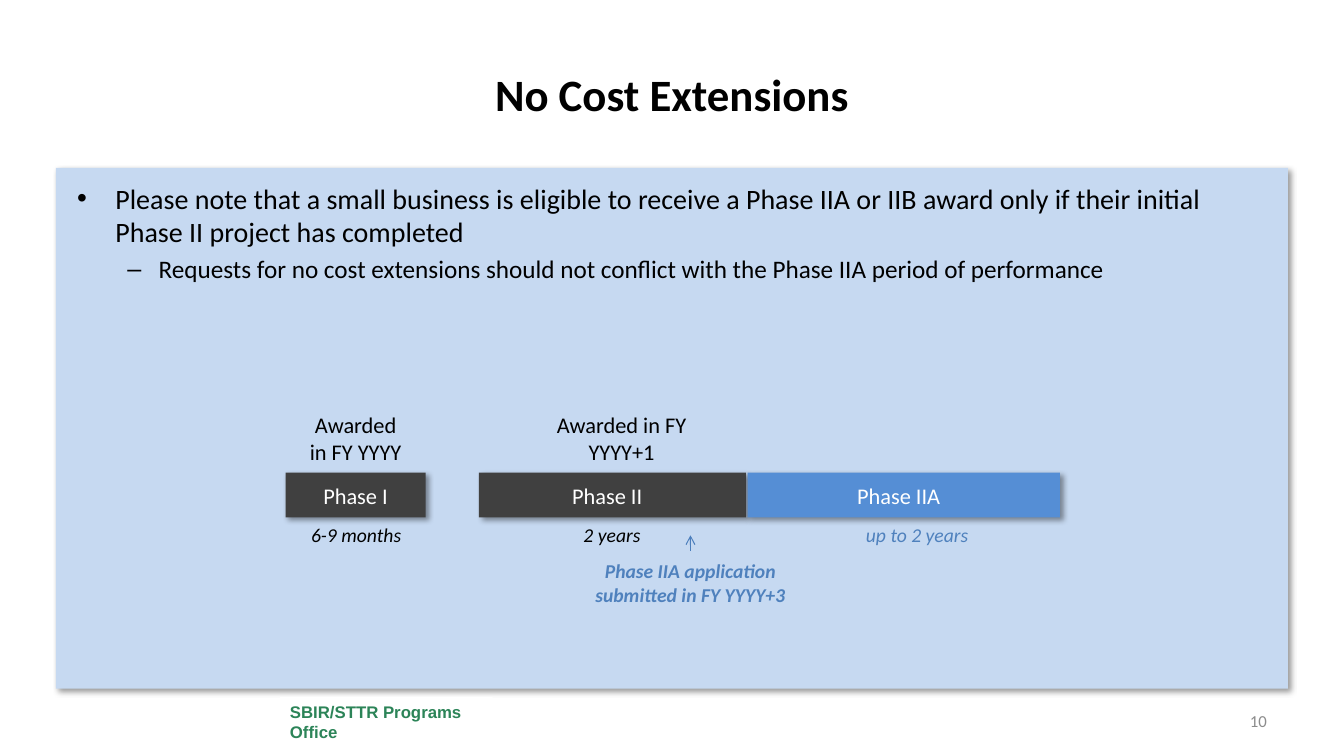
from dataclasses import dataclass

from lxml.etree import SubElement
from pptx import Presentation
from pptx.dml.color import RGBColor
from pptx.enum.shapes import MSO_CONNECTOR, MSO_SHAPE
from pptx.enum.text import MSO_ANCHOR, PP_ALIGN
from pptx.oxml.ns import qn
from pptx.util import Emu, Inches, Pt


@dataclass(frozen=True)
class Theme:
    font: str = "Calibri"
    footer_font: str = "Arial"
    black: str = "000000"
    white: str = "FFFFFF"
    panel: str = "C6D9F1"
    dark: str = "404040"
    blue: str = "558ED5"
    accent: str = "4F81BD"
    arrow: str = "4B7EBC"
    green: str = "2C8458"
    grey: str = "8C8C8C"
    title: int = 32
    body: int = 20
    sub: int = 18
    label: int = 16
    note: int = 14
    small: int = 12


T = Theme()
COLUMNS, ROWS = 240, 135
CELL = Inches(1) // 18
BAR_TOP, BAR_HEIGHT = 84.4, 8
DATE_TOP, DATE_HEIGHT = 72.5, 11.5
LENGTH_TOP, LENGTH_WIDTH, LENGTH_HEIGHT = 92.4, 23.6, 6.2


def grid(*cells):
    return [Emu(round(n * CELL)) for n in cells]


def add_run(p, text, size, color=T.black, font=T.font, bold=False, italic=False):
    r = p.add_run()
    r.text = text
    r.font.name = font
    r.font.size = Pt(size)
    r.font.bold = bold
    r.font.italic = italic
    r.font.color.rgb = RGBColor.from_string(color)


def add_rect(s, box, fill):
    sp = s.shapes.add_shape(MSO_SHAPE.RECTANGLE, *grid(*box))
    sp.fill.solid()
    sp.fill.fore_color.rgb = RGBColor.from_string(fill)
    sp.line.fill.background()
    sp.shadow.inherit = False
    sp.text_frame.word_wrap = True
    sp.text_frame.vertical_anchor = MSO_ANCHOR.MIDDLE
    return sp


def add_shadow(sp):
    effects = sp.element.spPr.find(qn("a:effectLst"))
    shadow = SubElement(effects, qn("a:outerShdw"), blurRad=str(Pt(4)),
                        dist=str(Pt(3)), dir="2700000", algn="tl", rotWithShape="0")
    color = SubElement(shadow, qn("a:srgbClr"), val=T.black)
    SubElement(color, qn("a:alpha"), val="40000")


def add_text(s, box, text, size, align=PP_ALIGN.CENTER, anchor=MSO_ANCHOR.TOP, **style):
    tf = s.shapes.add_textbox(*grid(*box)).text_frame
    tf.word_wrap = True
    tf.vertical_anchor = anchor
    p = tf.paragraphs[0]
    p.alignment = align
    add_run(p, text, size, **style)


def add_bullet(p, char, margin, hanging, level=0):
    p.level = level
    pPr = p._p.get_or_add_pPr()
    pPr.set("marL", str(Inches(margin)))
    pPr.set("indent", str(-Inches(hanging)))
    SubElement(pPr, qn("a:buFont"), typeface=T.footer_font)
    SubElement(pPr, qn("a:buChar"), char=char)


def add_body(s, box):
    tf = s.shapes.add_textbox(*grid(*box)).text_frame
    tf.word_wrap = True
    p = tf.paragraphs[0]
    add_bullet(p, "•", 0.38, 0.38)
    add_run(p, "Please note that a small business is eligible to receive a Phase IIA "
               "or IIB award only if their initial Phase II project has completed", T.body)
    p = tf.add_paragraph()
    p.space_before = Pt(0.2 * T.sub)
    add_bullet(p, "–", 0.81, 0.31, level=1)
    add_run(p, "Requests for no cost extensions should not conflict with "
               "the Phase IIA period of performance", T.sub)


def add_phase(s, left, width, name, fill, right_inset=0.1):
    sp = add_rect(s, (left, BAR_TOP, width, BAR_HEIGHT), fill)
    add_shadow(sp)
    tf = sp.text_frame
    tf.margin_right = Inches(right_inset)
    p = tf.paragraphs[0]
    p.alignment = PP_ALIGN.CENTER
    add_run(p, name, T.label, T.white)


def add_length(s, left, text, color=T.black):
    box = (left, LENGTH_TOP, LENGTH_WIDTH, LENGTH_HEIGHT)
    add_text(s, box, text, T.note, color=color, italic=True)


def add_date(s, left, width, text):
    add_text(s, (left, DATE_TOP, width, DATE_HEIGHT), text, T.label)


def add_arrow(s, x, start, end):
    cx = s.shapes.add_connector(MSO_CONNECTOR.STRAIGHT, *grid(x, start, x, end))
    cx.line.color.rgb = RGBColor.from_string(T.arrow)
    cx.line.width = Pt(0.75)
    SubElement(cx.line._get_or_add_ln(), qn("a:tailEnd"), type="arrow")
    SubElement(cx.element.spPr, qn("a:effectLst"))


def add_footer(s):
    sp = add_rect(s, (50, 124.5, 38, 8.7), T.white)
    p = sp.text_frame.paragraphs[0]
    p.alignment = PP_ALIGN.LEFT
    add_run(p, "SBIR/STTR Programs Office", T.small, T.green, T.footer_font, bold=True)
    add_text(s, (190, 125.1, 38, 7.2), "10", T.small, PP_ALIGN.RIGHT,
             MSO_ANCHOR.MIDDLE, color=T.grey)


def add_timeline(s):
    add_phase(s, 51, 25, "Phase I", T.dark)
    add_phase(s, 85.5, 47.7, "Phase II", T.dark, 0.2)
    add_phase(s, 133.5, 55.8, "Phase IIA", T.blue, 0.2)
    add_date(s, 53, 21, "Awarded in FY YYYY")
    add_date(s, 96, 30, "Awarded in FY YYYY+1")
    add_length(s, 51.8, "6-9 months")
    add_length(s, 97.5, "2 years")
    add_length(s, 152, "up to 2 years", T.accent)
    add_arrow(s, 123.3, 98.4, 95.6)
    add_text(s, (103.3, 99, 40, 10.3), "Phase IIA application submitted in FY YYYY+3",
             T.note, color=T.accent, bold=True, italic=True)


def main():
    prs = Presentation()
    prs.slide_width, prs.slide_height = grid(COLUMNS, ROWS)
    s = prs.slides.add_slide(prs.slide_layouts[6])
    add_shadow(add_rect(s, (10, 30, 220, 93), T.panel))
    add_footer(s)
    add_text(s, (12, 5.4, 216, 22.5), "No Cost Extensions", T.title,
             anchor=MSO_ANCHOR.MIDDLE, bold=True)
    add_body(s, (12, 31.5, 216, 89))
    add_timeline(s)
    prs.save("out.pptx")


if __name__ == "__main__":
    main()
